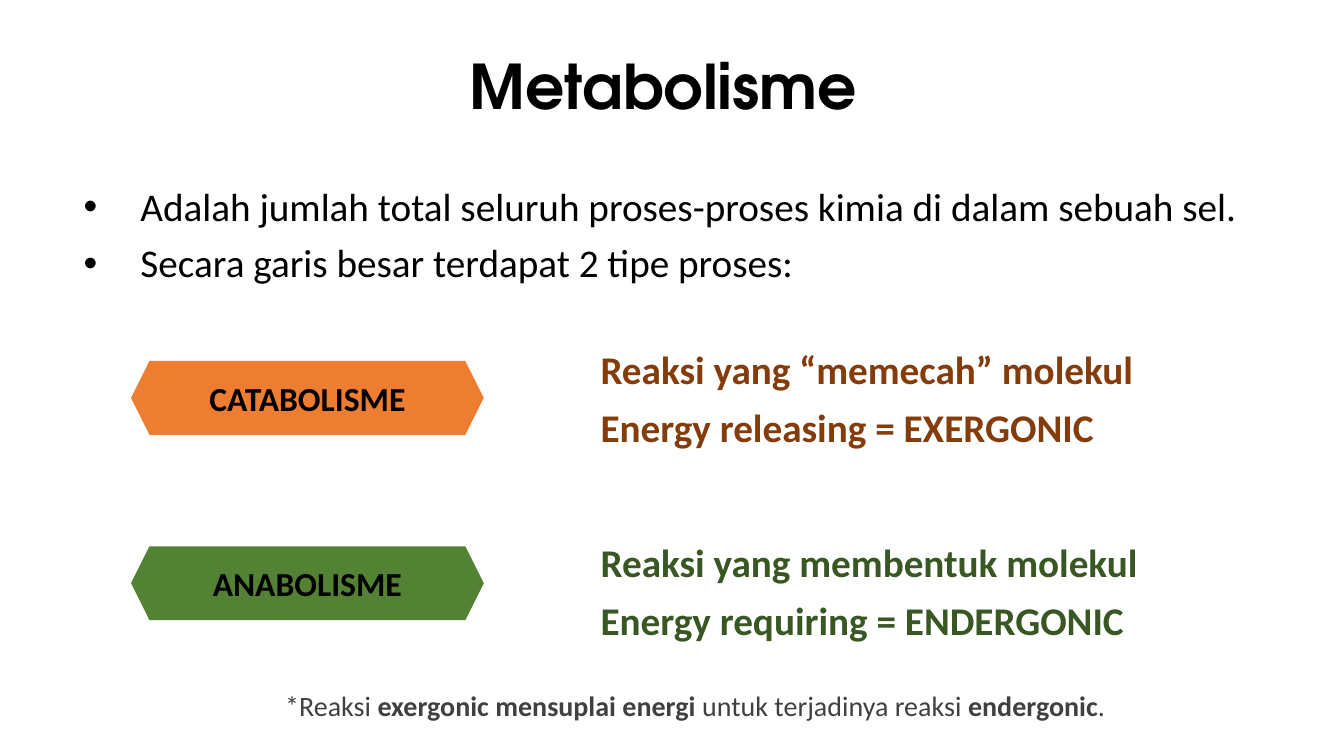
"""Build the slide on metabolism and its two types of process."""
from pptx import Presentation
from pptx.dml.color import RGBColor
from pptx.enum.shapes import MSO_SHAPE
from pptx.enum.text import MSO_ANCHOR, MSO_AUTO_SIZE, PP_ALIGN
from pptx.util import Pt

BLACK = RGBColor(0x00, 0x00, 0x00)
GREY = RGBColor(0x40, 0x40, 0x40)
ORANGE = RGBColor(0xED, 0x7D, 0x31)
BROWN = RGBColor(0x84, 0x3C, 0x0B)
GREEN = RGBColor(0x54, 0x82, 0x35)
DARK_GREEN = RGBColor(0x38, 0x57, 0x23)

BODY_FONT = "Calibri"
TITLE_FONT = "TeX Gyre Adventor"
LINE_STEP = 41.4

POINTS = [
    "Adalah jumlah total seluruh proses-proses kimia di dalam sebuah sel.",
    "Secara garis besar terdapat 2 tipe proses:",
]
PROCESSES = [
    ("CATABOLISME", 257.8, ORANGE, 242.8, BROWN,
     [("Reaksi yang “memecah” molekul", 398.9),
      ("Energy releasing = EXERGONIC", 370.8)]),
    ("ANABOLISME", 390.2, GREEN, 380.7, DARK_GREEN,
     [("Reaksi yang membentuk molekul", 402.5),
      ("Energy requiring = ENDERGONIC", 392.4)]),
]
FOOTNOTE = [
    ("*Reaksi ", False),
    ("exergonic mensuplai energi ", True),
    ("untuk terjadinya reaksi ", False),
    ("endergonic", True),
    (".", False),
]


def format_run(run, size, color, bold=False, font=BODY_FONT):
    """Set the font, size, colour and weight of a run."""
    run.font.name = font
    run.font.size = Pt(size)
    run.font.color.rgb = color
    run.font.bold = bold


def place(shape, left, top, width, height):
    """Move and resize a shape, in points."""
    shape.left, shape.top = Pt(left), Pt(top)
    shape.width, shape.height = Pt(width), Pt(height)


def fill_title(title, text):
    """Place and format the slide title."""
    place(title, 66.2, 28.8, 828, 69.8)
    title.text_frame.text = text
    title.text_frame.auto_size = MSO_AUTO_SIZE.NONE
    title.text_frame.vertical_anchor = MSO_ANCHOR.MIDDLE
    paragraph = title.text_frame.paragraphs[0]
    paragraph.alignment = PP_ALIGN.CENTER
    paragraph.line_spacing = 0.9
    format_run(paragraph.runs[0], 44, BLACK, True, TITLE_FONT)


def fill_body(body, points):
    """Place the bulleted list and format its paragraphs."""
    place(body, 52.6, 130.3, 857.5, 95.8)
    body.text_frame.text = "\n".join(points)
    body.text_frame.auto_size = MSO_AUTO_SIZE.NONE
    for paragraph in body.text_frame.paragraphs:
        paragraph.line_spacing = 0.9
        paragraph.space_before = Pt(10)
        properties = paragraph._p.get_or_add_pPr()
        properties.set("marL", str(Pt(40.5)))
        properties.set("indent", str(-Pt(40.5)))
        format_run(paragraph.runs[0], 28, BLACK)


def add_label(slide, text, top, color):
    """Add a hexagon that names a process."""
    shape = slide.shapes.add_shape(
        MSO_SHAPE.HEXAGON, Pt(93.6), Pt(top), Pt(252), Pt(52.8))
    shape.shadow.inherit = False
    shape.fill.solid()
    shape.fill.fore_color.rgb = color
    shape.line.fill.background()
    shape.text_frame.text = text
    shape.text_frame.vertical_anchor = MSO_ANCHOR.MIDDLE
    paragraph = shape.text_frame.paragraphs[0]
    paragraph.alignment = PP_ALIGN.CENTER
    format_run(paragraph.runs[0], 24, BLACK, True)


def add_line(slide, parts, left, top, width, height, size, color):
    """Add one unwrapped line of text made of (text, bold) parts."""
    box = slide.shapes.add_textbox(Pt(left), Pt(top), Pt(width), Pt(height))
    box.text_frame.word_wrap = False
    box.text_frame.auto_size = MSO_AUTO_SIZE.SHAPE_TO_FIT_TEXT
    paragraph = box.text_frame.paragraphs[0]
    for text, bold in parts:
        run = paragraph.add_run()
        run.text = text
        format_run(run, size, color, bold)


def main():
    """Build and save the presentation."""
    presentation = Presentation()
    presentation.slide_width, presentation.slide_height = Pt(960), Pt(540)
    slide = presentation.slides.add_slide(presentation.slide_layouts[1])
    fill_title(slide.shapes.title, "Metabolisme ")
    fill_body(slide.placeholders[1], POINTS)
    for name, label_top, fill, text_top, color, lines in PROCESSES:
        add_label(slide, name, label_top, fill)
        for row, (text, width) in enumerate(lines):
            add_line(slide, [(text, True)], 421.9, text_top + row * LINE_STEP,
                     width, 41.2, 28, color)
    add_line(slide, FOOTNOTE, 196.6, 488.2, 605.5, 31.5, 20, GREY)
    presentation.save("out.pptx")


if __name__ == "__main__":
    main()
